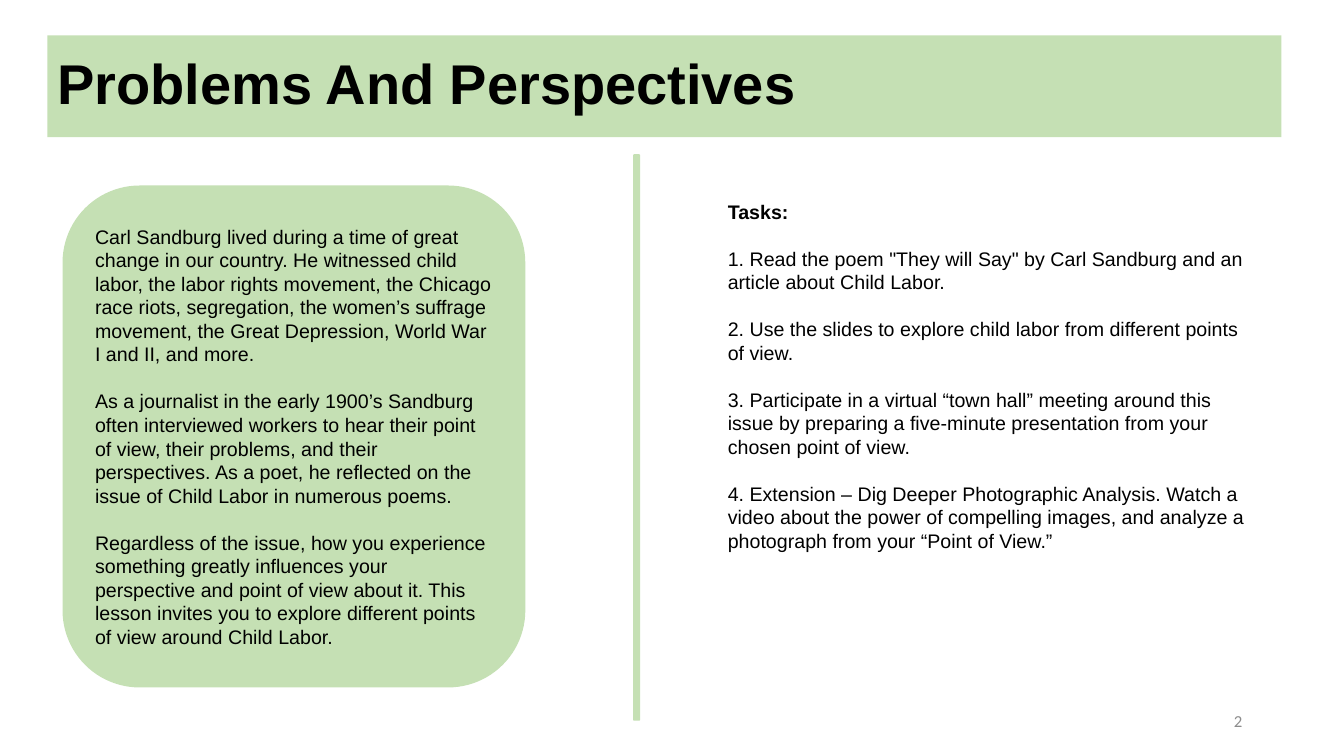
from dataclasses import dataclass

from pptx import Presentation
from pptx import util as u
from pptx.dml.color import RGBColor
from pptx.enum import shapes, text

PX = 9144  # EMU in one px, 100 px to the inch
COLORS = {"green": "C5E0B4", "black": "000000", "grey": "8C8C8C"}
MIDDLE = text.MSO_ANCHOR.MIDDLE
TOP = text.MSO_ANCHOR.TOP
LEFT = text.PP_ALIGN.LEFT
RIGHT = text.PP_ALIGN.RIGHT
RECT = shapes.MSO_SHAPE.RECTANGLE
ROUNDED = shapes.MSO_SHAPE.ROUNDED_RECTANGLE


@dataclass(frozen=True)
class Box:
    left: int
    top: int
    width: int
    height: int


@dataclass(frozen=True)
class Style:
    size: int
    font: str = "Arial"
    color: str = "black"
    align: text.PP_ALIGN = LEFT
    anchor: text.MSO_ANCHOR = MIDDLE
    gap: float = 0
    line_spacing: float = 1.0


@dataclass(frozen=True)
class Line:
    words: str
    bold: bool = False


TITLE = [Line("Problems And Perspectives", bold=True)]
BACKGROUND = [
    Line("Carl Sandburg lived during a time of great change in our country. "
         "He witnessed child labor, the labor rights movement, "
         "the Chicago race riots, segregation, the women’s suffrage movement, "
         "the Great Depression, World War I and II, and more."),
    Line("As a journalist in the early 1900’s Sandburg often interviewed workers "
         "to hear their point of view, their problems, and their perspectives. "
         "As a poet, he reflected on the issue of Child Labor in numerous poems."),
    Line("Regardless of the issue, how you experience something greatly influences "
         "your perspective and point of view about it. This lesson invites you to "
         "explore different points of view around Child Labor."),
]
TASKS = [
    Line("Tasks:", bold=True),
    Line('1. Read the poem "They will Say" by Carl Sandburg and an article '
         "about Child Labor."),
    Line("2. Use the slides to explore child labor from different points of view."),
    Line("3. Participate in a virtual “town hall” meeting around this issue by "
         "preparing a five-minute presentation from your chosen point of view."),
    Line("4. Extension – Dig Deeper Photographic Analysis. Watch a video about the "
         "power of compelling images, and analyze a photograph from your "
         "“Point of View.”"),
]


def emu(box: Box) -> list[int]:
    return [n * PX for n in (box.left, box.top, box.width, box.height)]


def add_panel(slide, kind: shapes.MSO_SHAPE, box: Box):
    sp = slide.shapes.add_shape(kind, *emu(box))
    sp.shadow.inherit = False
    sp.fill.solid()
    sp.fill.fore_color.rgb = RGBColor.from_string(COLORS["green"])
    sp.line.fill.background()
    return sp


def write(sp, lines: list[Line], style: Style) -> None:
    tf = sp.text_frame
    tf.word_wrap = True
    tf.vertical_anchor = style.anchor
    for i, line in enumerate(lines):
        p = tf.add_paragraph() if i else tf.paragraphs[0]
        p.alignment = style.align
        p.line_spacing = style.line_spacing
        p.space_before = u.Pt(style.gap if i else 0)
        r = p.add_run()
        r.text = line.words
        r.font.name = style.font
        r.font.size = u.Pt(style.size)
        r.font.bold = line.bold
        r.font.color.rgb = RGBColor.from_string(COLORS[style.color])


def main() -> None:
    prs = Presentation()
    prs.slide_width, prs.slide_height = 1333 * PX, 750 * PX
    slide = prs.slides.add_slide(prs.slide_layouts[6])

    title = add_panel(slide, RECT, Box(47, 35, 1224, 101))
    write(title, TITLE, Style(40, line_spacing=0.9))

    add_panel(slide, ROUNDED, Box(628, 153, 7, 562))

    background = add_panel(slide, ROUNDED, Box(62, 184, 459, 498))
    write(background, BACKGROUND, Style(14, gap=16.8))

    tasks = slide.shapes.add_textbox(*emu(Box(712, 193, 544, 387)))
    write(tasks, TASKS, Style(14, anchor=TOP, gap=16.8))

    number = slide.shapes.add_textbox(*emu(Box(942, 695, 300, 40)))
    write(number, [Line("2")], Style(12, "Calibri", "grey", RIGHT))

    prs.save("out.pptx")


if __name__ == "__main__":
    main()
